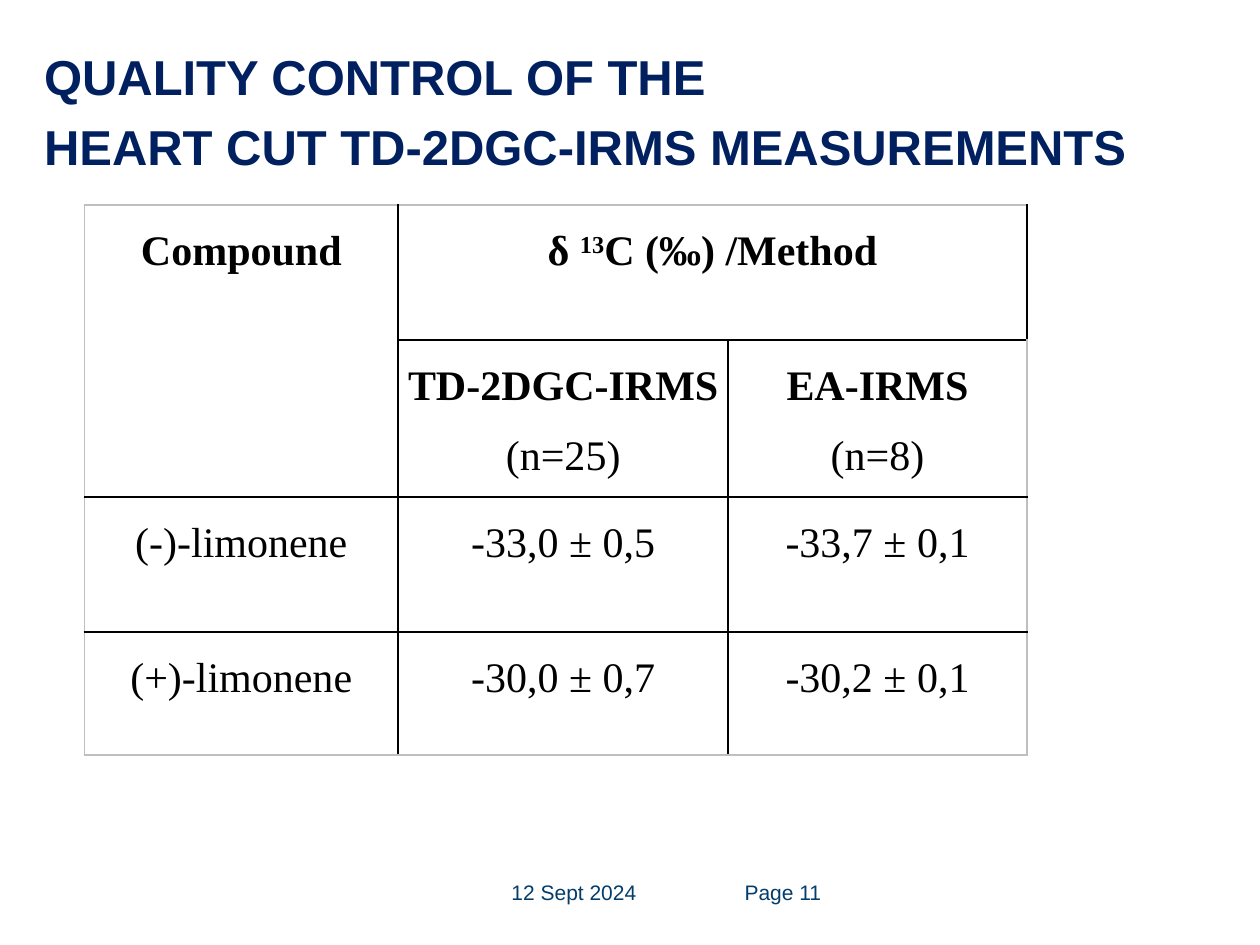
import pptx
import pptx.util
import pptx.dml.color
import pptx.enum.text
import pptx.oxml.ns
import lxml.etree

WIDTH, HEIGHT = pptx.util.Inches(10), pptx.util.Inches(7.5)
COLOURS = {"title": "002060", "footer": "023D6B", "ink": "000000", "frame": "BFBFBF"}
COLUMN_SHARES = [0.249, 0.262, 0.237]
ROW_SHARES = [0.143, 0.166, 0.143, 0.13]
CELLS = {
    (0, 0): [("Compound", True)],
    (0, 1): [("δ ", True), ("13", True), ("C (‰) /Method", True)],
    (1, 1): [("TD-2DGC-IRMS", True), ("\v(n=25)", False)],
    (1, 2): [("EA-IRMS", True), ("\v(n=8)", False)],
    (2, 0): [("(-)-limonene", False)],
    (2, 1): [("-33,0 ± 0,5", False)],
    (2, 2): [("-33,7 ± 0,1", False)],
    (3, 0): [("(+)-limonene", False)],
    (3, 1): [("-30,0 ± 0,7", False)],
    (3, 2): [("-30,2 ± 0,1", False)],
}


def place(left, top, width, height):
    """Turn shares of the slide into lengths."""
    return int(left * WIDTH), int(top * HEIGHT), int(width * WIDTH), int(height * HEIGHT)


def style(font, name, size, colour, bold=False):
    """Set the look of a font."""
    font.name, font.size, font.bold = name, pptx.util.Pt(size), bold
    font.color.rgb = pptx.dml.color.RGBColor.from_string(COLOURS[colour])


def add_text(page, box, text, size, colour, bold=False, spacing=1.0):
    """Write one Arial paragraph in a box without margins."""
    frame = page.shapes.add_textbox(*place(*box)).text_frame
    frame.word_wrap = True
    frame.margin_left = frame.margin_top = frame.margin_right = frame.margin_bottom = 0
    para = frame.paragraphs[0]
    para.text = text
    para.line_spacing = spacing
    style(para.font, "Arial", size, colour, bold)


def add_borders(cell, row, column):
    """Rule a cell in black, with grey along the table's outer frame."""
    outer = {"L": column == 0, "R": column == len(COLUMN_SHARES) - 1,
             "T": row == 0, "B": row == len(ROW_SHARES) - 1}
    properties = cell._tc.get_or_add_tcPr()
    qualify = pptx.oxml.ns.qn
    for index, (side, on_frame) in enumerate(outer.items()):
        line = lxml.etree.Element(qualify(f"a:ln{side}"), w=str(pptx.util.Pt(1)))
        fill = lxml.etree.SubElement(line, qualify("a:solidFill"))
        colour = COLOURS["frame" if on_frame else "ink"]
        lxml.etree.SubElement(fill, qualify("a:srgbClr"), val=colour)
        properties.insert(index, line)


def fill_cell(cell, spans):
    """Write the centred spans of one cell."""
    cell.margin_left = cell.margin_right = pptx.util.Inches(0.06)
    cell.margin_top = cell.margin_bottom = 0
    para = cell.text_frame.paragraphs[0]
    para.alignment = pptx.enum.text.PP_ALIGN.CENTER
    para.line_spacing, para.space_after = 1.5, pptx.util.Pt(10)
    for text, bold in spans:
        if text.startswith("\v"):
            para.add_line_break()
        span = para.add_run()
        span.text = text.lstrip("\v")
        style(span.font, "Times New Roman", 24, "ink", bold)
        if text == "13":
            span.font._element.set("baseline", "30000")


def add_results(page, left, top):
    """Build the table of isotope values from its top left corner."""
    box = place(left, top, sum(COLUMN_SHARES), sum(ROW_SHARES))
    table = page.shapes.add_table(len(ROW_SHARES), len(COLUMN_SHARES), *box).table
    table.first_row = table.horz_banding = False
    for column, share in zip(table.columns, COLUMN_SHARES):
        column.width = int(share * WIDTH)
    for row, share in zip(table.rows, ROW_SHARES):
        row.height = int(share * HEIGHT)
    table.cell(0, 0).merge(table.cell(1, 0))
    table.cell(0, 1).merge(table.cell(0, 2))
    for row in range(len(ROW_SHARES)):
        for column in range(len(COLUMN_SHARES)):
            cell = table.cell(row, column)
            cell.fill.background()
            add_borders(cell, row, column)
            if (row, column) in CELLS:
                fill_cell(cell, CELLS[row, column])
    heading = table.cell(1, 2).text_frame.paragraphs[0]
    heading._p.get_or_add_pPr().set("indent", str(-pptx.util.Inches(0.25)))


def add_footer(page, top):
    """Write the date and the page number on one line."""
    add_text(page, (0.406, top, 0.17, 0.032), "12 Sept 2024", 12, "footer")
    add_text(page, (0.591, top, 0.11, 0.032), "Page 11", 12, "footer")


def main():
    """Build the slide and save it."""
    deck = pptx.Presentation()
    deck.slide_width, deck.slide_height = WIDTH, HEIGHT
    page = deck.slides.add_slide(deck.slide_layouts[6])
    add_text(page, (0.035, 0.037, 0.9, 0.164),
             "QUALITY CONTROL OF THE\vHEART CUT TD-2DGC-IRMS MEASUREMENTS",
             28, "title", True, 1.19)
    add_results(page, 0.067, 0.217)
    add_footer(page, 0.931)
    deck.save("out.pptx")


if __name__ == "__main__":
    main()
